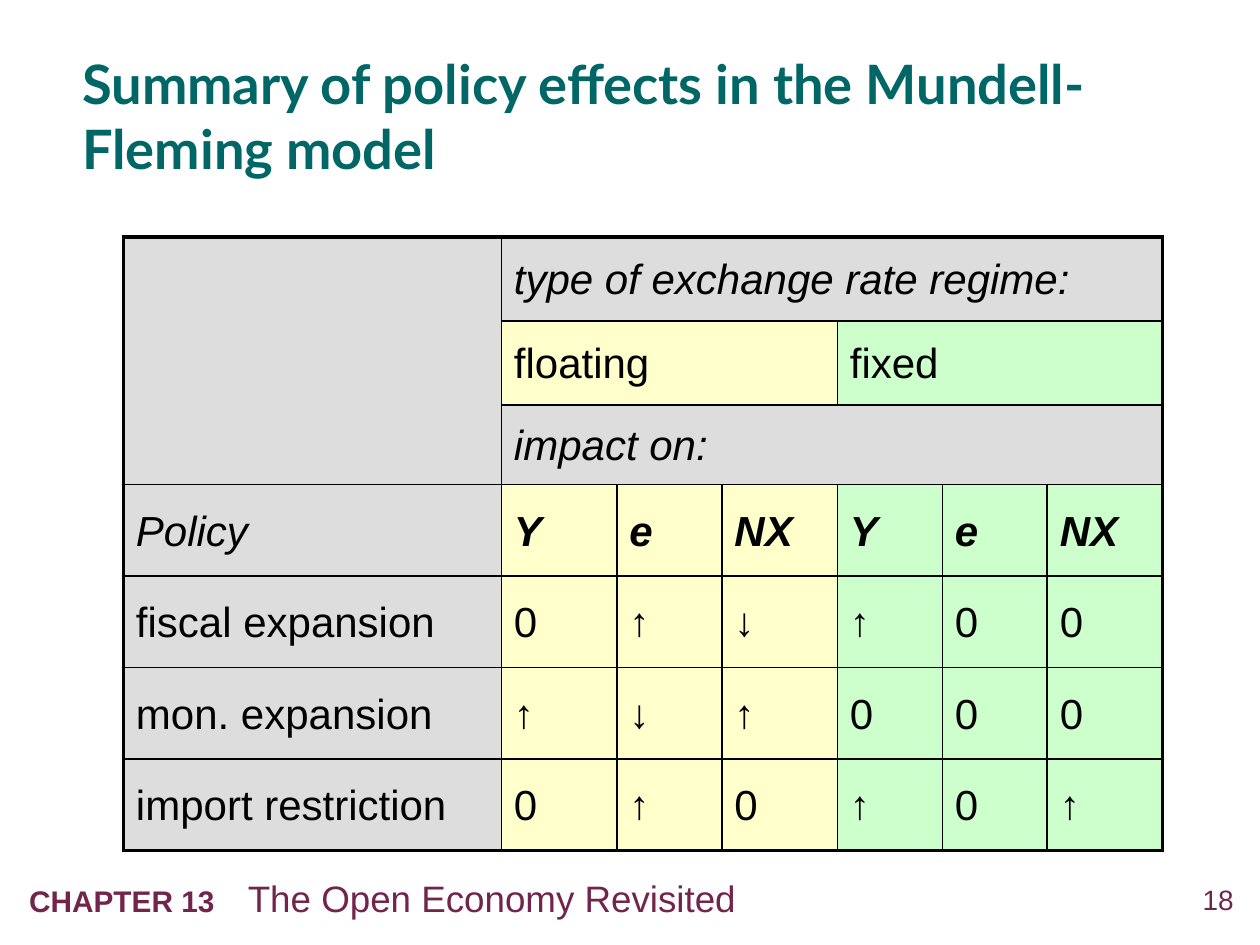
from lxml.etree import SubElement
from pptx import Presentation
from pptx.dml.color import RGBColor
from pptx.enum.text import MSO_ANCHOR, PP_ALIGN
from pptx.oxml.ns import qn
from pptx.util import Pt

BLACK = RGBColor(0, 0, 0)
GRAY = RGBColor(0xDD, 0xDD, 0xDD)
CREAM = RGBColor(0xFF, 0xFF, 0xCC)
MINT = RGBColor(0xCC, 0xFF, 0xCC)
TEAL = RGBColor(0, 0x66, 0x66)
PLUM = RGBColor(0x71, 0x25, 0x4B)

COLS = [216, 66, 60, 66, 60, 60, 66]
ROWS = [48, 48, 45.5] + [52.25] * 4
SPANS = [(0, 0, 2, 0), (0, 1, 0, 6), (1, 1, 1, 3), (1, 4, 1, 6), (2, 1, 2, 6)]
HEADS = [(0, 1, "type of exchange rate regime:"), (1, 1, "floating"),
         (1, 4, "fixed"), (2, 1, "impact on:")]
BODY = [
    ["Policy", "Y", "e", "NX", "Y", "e", "NX"],
    ["fiscal expansion", "0", "↑", "↓", "↑", "0", "0"],
    ["mon. expansion", "↑", "↓", "↑", "0", "0", "0"],
    ["import restriction", "0", "↑", "0", "↑", "0", "↑"],
]


def write(para, text, size=24, font="Arial", color=BLACK, bold=False, italic=False):
    run = para.add_run()
    run.text = text
    run.font.size = Pt(size)
    run.font.name = font
    run.font.color.rgb = color
    run.font.bold = bold
    run.font.italic = italic


def add_frame(slide, box, inset=True):
    frame = slide.shapes.add_textbox(*map(Pt, box)).text_frame
    frame.word_wrap = True
    if not inset:
        frame.margin_left = frame.margin_right = 0
        frame.margin_top = frame.margin_bottom = 0
    return frame


def add_title(slide, box):
    frame = add_frame(slide, box, inset=False)
    frame.vertical_anchor = MSO_ANCHOR.MIDDLE
    write(frame.paragraphs[0], "Summary of policy effects in the Mundell-Fleming model",
          size=31, font="Lato", color=TEAL, bold=True)


def add_footer(slide, box):
    para = add_frame(slide, box).paragraphs[0]
    tabs = SubElement(para._p.get_or_add_pPr(), qn("a:tabLst"))
    SubElement(tabs, qn("a:tab"), pos=str(Pt(125)), algn="l")
    write(para, "CHAPTER 13\t", size=17, color=PLUM, bold=True)
    write(para, "The Open Economy Revisited", size=21, color=PLUM)


def add_number(slide, box):
    para = add_frame(slide, box, inset=False).paragraphs[0]
    para.alignment = PP_ALIGN.RIGHT
    write(para, "18", size=16, color=PLUM)


def set_edges(cell, row, col):
    right, base = col + cell.span_width, row + cell.span_height
    outer = {"L": col == 0, "R": right == len(COLS),
             "T": row == 0, "B": base == len(ROWS)}
    props = cell._tc.get_or_add_tcPr()
    for side, thick in outer.items():
        line = SubElement(props, qn("a:ln" + side), w=str(Pt(2.25 if thick else 1)))
        fill = SubElement(line, qn("a:solidFill"))
        SubElement(fill, qn("a:srgbClr"), val=str(BLACK))


def get_fill(row, col):
    if col == 0 or row in (0, 2):
        return GRAY
    return CREAM if col < 4 else MINT


def fill_cell(cell, text, row, col):
    para = cell.text_frame.paragraphs[0]
    para.line_spacing = 1.05
    para.space_before = Pt(10.8)
    write(para, text, size=23 if text in "↑↓" else 24,
          bold=row == 3 and col > 0, italic=row in (0, 2, 3))


def add_grid(slide, box):
    table = slide.shapes.add_table(len(ROWS), len(COLS), *map(Pt, box)).table
    table.first_row = table.horz_banding = False
    for part, width in zip(table.columns, COLS):
        part.width = Pt(width)
    for part, height in zip(table.rows, ROWS):
        part.height = Pt(height)
    for top, left, base, right in SPANS:
        table.cell(top, left).merge(table.cell(base, right))
    for row in range(len(ROWS)):
        for col in range(len(COLS)):
            cell = table.cell(row, col)
            cell.vertical_anchor = MSO_ANCHOR.MIDDLE
            set_edges(cell, row, col)
            cell.fill.solid()
            cell.fill.fore_color.rgb = get_fill(row, col)
    items = HEADS + [(row, col, text) for row, line in enumerate(BODY, 3)
                     for col, text in enumerate(line)]
    for row, col, text in items:
        fill_cell(table.cell(row, col), text, row, col)


def main():
    deck = Presentation()
    deck.slide_width, deck.slide_height = Pt(720), Pt(540)
    slide = deck.slides.add_slide(deck.slide_layouts[6])
    add_number(slide, (665.5, 504.5, 39.5, 23))
    add_footer(slide, (9.5, 497, 589, 32.5))
    add_title(slide, (47, 18.5, 639.5, 94.5))
    add_grid(slide, (70.5, 135.5, sum(COLS), sum(ROWS)))
    deck.save("out.pptx")


if __name__ == "__main__":
    main()
